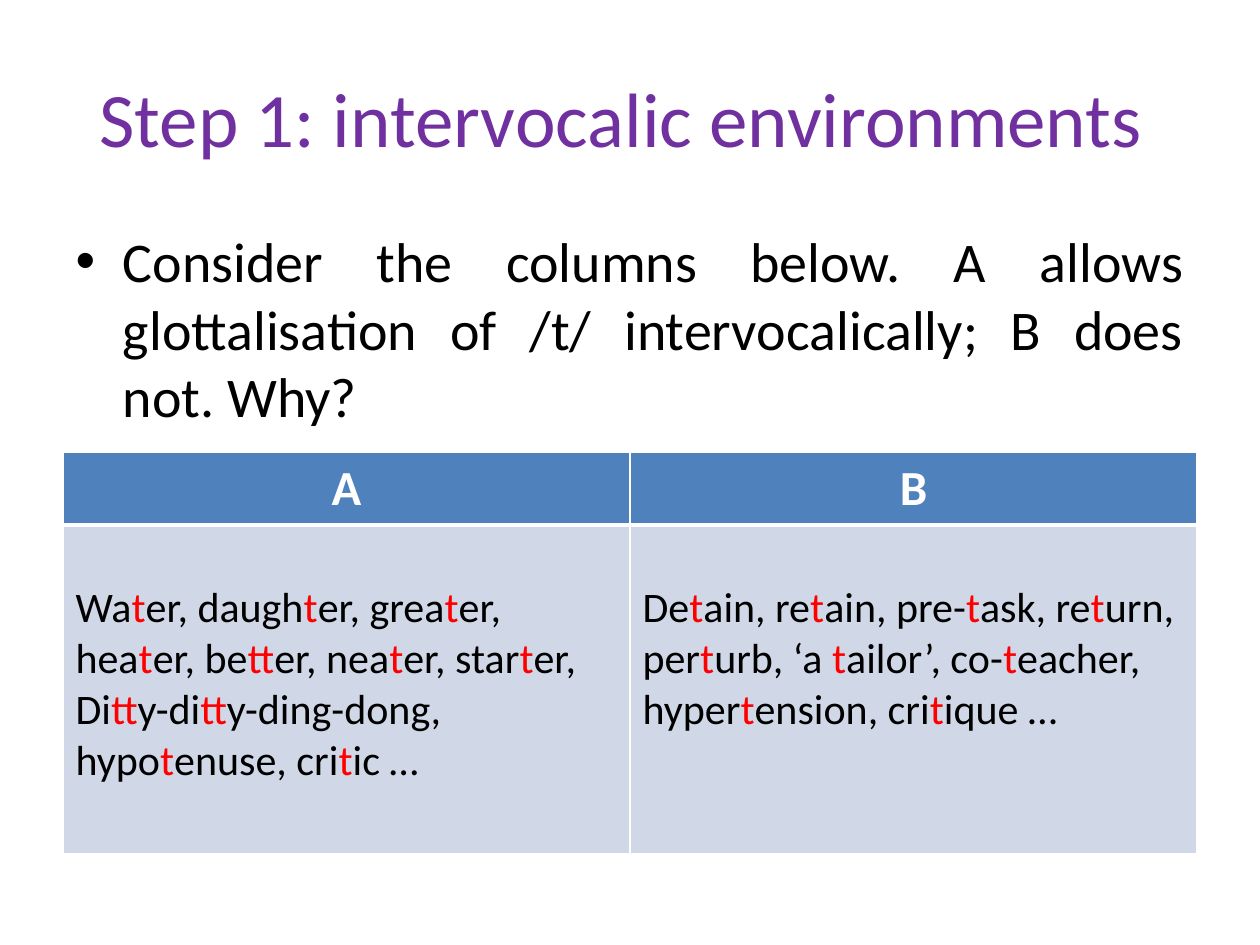
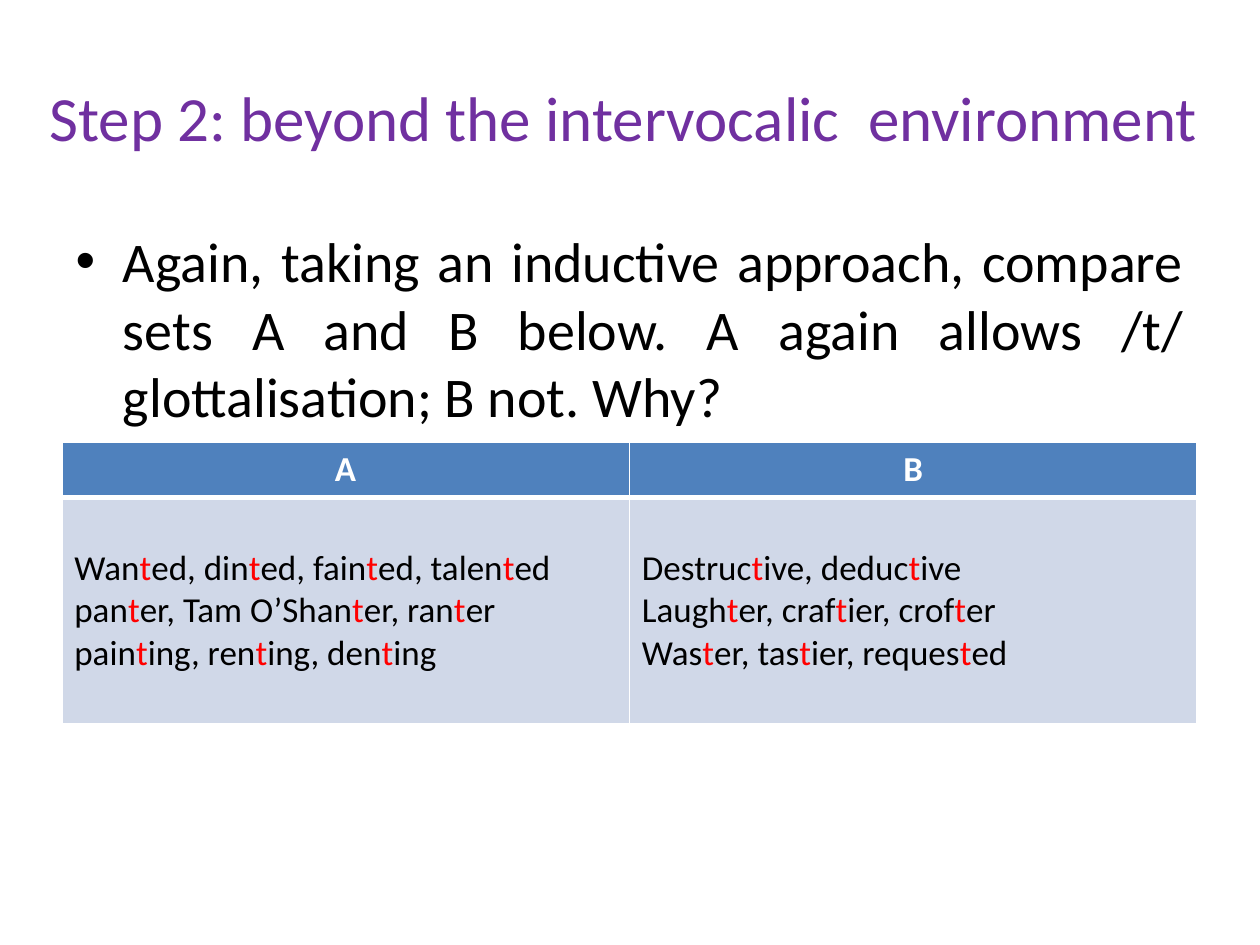
from lxml import etree
from pptx import Presentation
from pptx import util as u
from pptx.dml.color import RGBColor
from pptx.enum import text
from pptx.oxml.ns import qn

FONT = "Calibri"
PURPLE, BLACK, WHITE, RED = "7030A0", "000000", "FFFFFF", "FF0000"
HEADER_BLUE, CELL_BLUE = "4F81BD", "D0D8E8"
CENTER, LEFT, JUSTIFY = (text.PP_ALIGN.CENTER, text.PP_ALIGN.LEFT,
                         text.PP_ALIGN.JUSTIFY)
LINE_HEIGHT = 1.22  # line height of the font, relative to its size
CELL_MARGIN = 0.05

# Sounds between asterisks are highlighted; boxes are left, top, width, height.
STEPS = [
    {
        "title": "Step 1: intervocalic environments ",
        "title_box": (0.5, 0.3, 9, 1.25),
        "title_size": 44,
        "question": "Consider the columns below. A allows glottalisation of /t/ "
                    "intervocalically; B does not. Why? ",
        "table_box": (0.5, 3.59, 9, 3.18),
        "header_height": 0.57,
        "header_size": 28,
        "word_size": 24,
        "columns": {
            "A": ["Wa*t*er, daugh*t*er, grea*t*er, hea*t*er, be*tt*er, nea*t*er, "
                  "star*t*er, Di*tt*y-di*tt*y-ding-dong, hypo*t*enuse, cri*t*ic …"],
            "B": ["De*t*ain, re*t*ain, pre-*t*ask, re*t*urn, per*t*urb, ‘a *t*ailor’, "
                  "co-*t*eacher, hyper*t*ension, cri*t*ique …"],
        },
    },
    {
        "title": "Step 2: beyond the intervocalic  environment ",
        "title_box": (0.28, 0.3, 9.45, 1.25),
        "title_size": 36,
        "question": "Again, taking an inductive approach, compare sets A and B below. "
                    "A again allows /t/ glottalisation; B not. Why? ",
        "table_box": (0.49, 3.51, 9.01, 2.23),
        "header_height": 0.44,
        "header_size": 20,
        "word_size": 20,
        "columns": {
            "A": ["Wan*t*ed, din*t*ed, fain*t*ed, talen*t*ed",
                  "pan*t*er, Tam O’Shan*t*er, ran*t*er",
                  "pain*t*ing, ren*t*ing, den*t*ing"],
            "B": ["Destruc*t*ive, deduc*t*ive",
                  "Laugh*t*er, craf*t*ier, crof*t*er",
                  "Was*t*er, tas*t*ier, reques*t*ed"],
        },
    },
]
QUESTION_BOX = (0.5, 1.75, 9, 4.95)


def rgb(color):
    return RGBColor.from_string(color)


def write(frame, lines, size, color=BLACK, align=LEFT, bold=False):
    """Write one paragraph per line, with the parts between asterisks in red."""
    for number, line in enumerate(lines):
        paragraph = frame.paragraphs[0] if number == 0 else frame.add_paragraph()
        paragraph.alignment = align
        for index, part in enumerate(line.split("*")):
            if not part:
                continue
            font_run = paragraph.add_run()
            font_run.text = part
            font = font_run.font
            font.name, font.size, font.bold = FONT, u.Pt(size), bold
            font.color.rgb = rgb(RED if index % 2 else color)


def fill_placeholder(placeholder, box, line, size, **style):
    (placeholder.left, placeholder.top,
     placeholder.width, placeholder.height) = map(u.Inches, box)
    placeholder.text_frame.auto_size = text.MSO_AUTO_SIZE.NONE
    write(placeholder.text_frame, [line], size, **style)


def paint_cell(cell, fill, top=1, bottom=1):
    """Give the cell white borders, widths in points, and a solid fill."""
    properties = cell._tc.get_or_add_tcPr()
    for side, width in (("L", 1), ("R", 1), ("T", top), ("B", bottom)):
        border = etree.SubElement(properties, qn(f"a:ln{side}"), w=str(u.Pt(width)))
        solid = etree.SubElement(border, qn("a:solidFill"))
        etree.SubElement(solid, qn("a:srgbClr"), val=WHITE)
    cell.fill.solid()
    cell.fill.fore_color.rgb = rgb(fill)


def add_word_table(slide, step):
    columns = step["columns"]
    *_, width, height = step["table_box"]
    table = slide.shapes.add_table(
        2, len(columns), *map(u.Inches, step["table_box"])).table
    table.rows[0].height = u.Inches(step["header_height"])
    table.rows[1].height = u.Inches(height - step["header_height"])
    blank_line = step["word_size"] * LINE_HEIGHT / 72

    for index, (heading, words) in enumerate(columns.items()):
        table.columns[index].width = u.Inches(width / len(columns))
        header, body = table.cell(0, index), table.cell(1, index)
        paint_cell(header, HEADER_BLUE, bottom=3)
        write(header.text_frame, [heading], step["header_size"],
              color=WHITE, align=CENTER, bold=True)
        paint_cell(body, CELL_BLUE, top=3)
        body.margin_top = u.Inches(CELL_MARGIN + blank_line)
        write(body.text_frame, words, step["word_size"])


def main():
    deck = Presentation()
    deck.slide_width, deck.slide_height = u.Inches(10), u.Inches(7.5)
    for step in STEPS:
        slide = deck.slides.add_slide(deck.slide_layouts[1])
        fill_placeholder(slide.shapes.title, step["title_box"], step["title"],
                         step["title_size"], color=PURPLE, align=CENTER)
        fill_placeholder(slide.placeholders[1], QUESTION_BOX, step["question"],
                         32, align=JUSTIFY)
        add_word_table(slide, step)
    deck.save("out.pptx")


if __name__ == "__main__":
    main()
